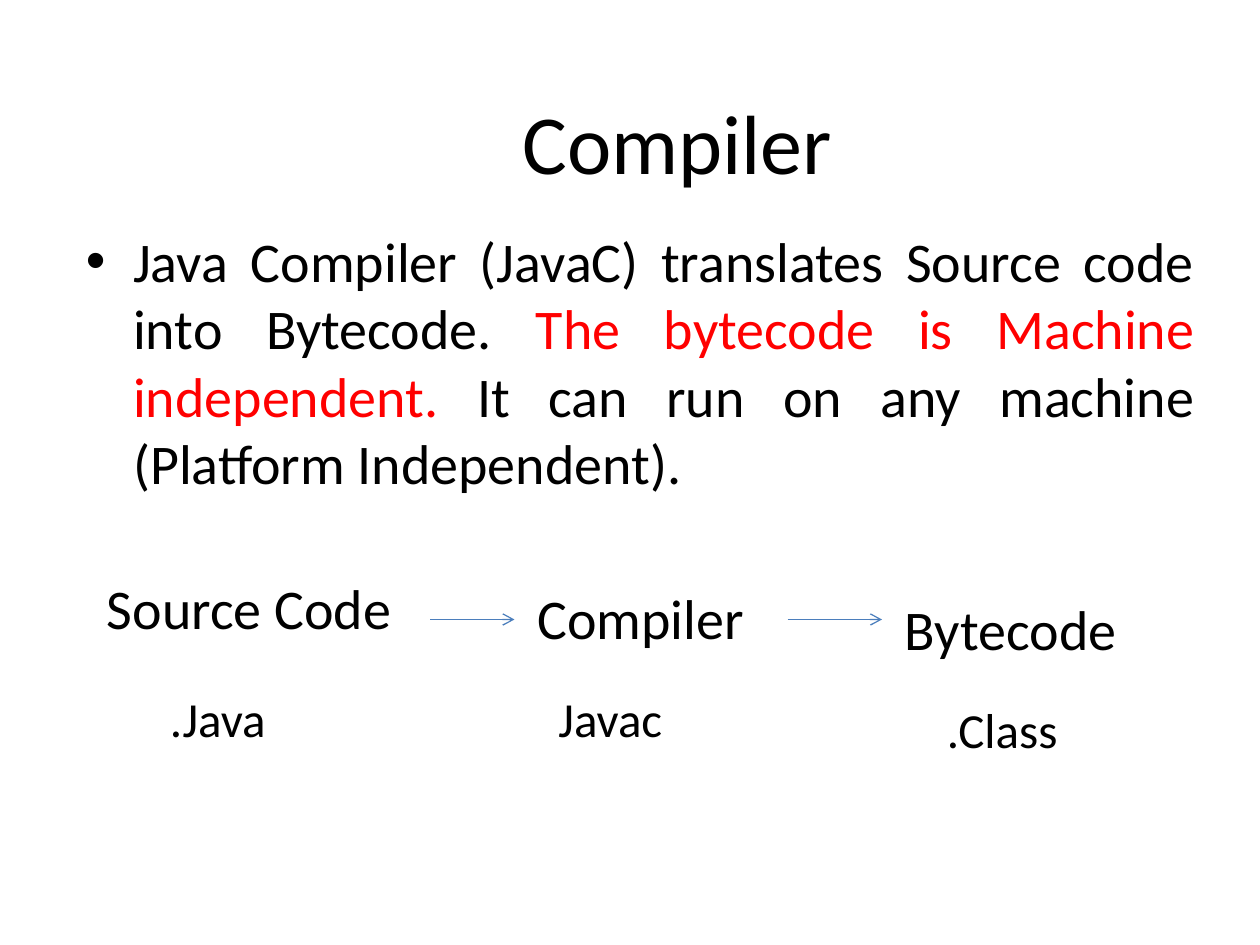
from lxml.etree import SubElement
from pptx import Presentation
from pptx.dml.color import RGBColor
from pptx.enum.shapes import MSO_CONNECTOR as Connector
from pptx.enum.text import MSO_AUTO_SIZE as AutoSize, PP_ALIGN as Align
from pptx.oxml.ns import qn
from pptx.util import Emu, Pt

EMU_PER_PX = 7620
BLACK, RED, BLUE = "000000", "FF0000", "4B7EBC"


def px(length):
    """Turn whole pixels (120 to the inch) into EMU."""
    return Emu(length * EMU_PER_PX)


def color(value):
    """Turn a hex string into a colour."""
    return RGBColor.from_string(value)


def set_format(target, values):
    """Set every attribute named in a dict of values."""
    for name, value in values.items():
        setattr(target, name, value)


def add_text(slide, box, runs, size, align=Align.LEFT, auto_size=AutoSize.SHAPE_TO_FIT_TEXT):
    """Add a one-paragraph text box from (text, colour) runs."""
    shape = slide.shapes.add_textbox(*map(px, box))
    set_format(shape.text_frame, {"word_wrap": True, "auto_size": auto_size})
    paragraph = shape.text_frame.paragraphs[0]
    paragraph.alignment = align
    for text, fill in runs:
        run = paragraph.add_run()
        run.text = text
        set_format(run.font, {"name": "Calibri", "size": Pt(size)})
        run.font.color.rgb = color(fill)
    return paragraph


def add_bullet(paragraph, indent):
    """Give a paragraph a round bullet with a hanging indent."""
    paragraph.space_before = Pt(6.4)
    properties = paragraph._p.get_or_add_pPr()
    properties.set("marL", str(px(indent)))
    properties.set("indent", str(-px(indent)))
    SubElement(properties, qn("a:buFont"), typeface="Arial")
    SubElement(properties, qn("a:buChar"), char="•")


def add_arrow(slide, start, end, y):
    """Add a thin horizontal arrow without a shadow."""
    arrow = slide.shapes.add_connector(Connector.STRAIGHT, px(start), px(y), px(end), px(y))
    arrow.line.width = Pt(0.75)
    arrow.line.color.rgb = color(BLUE)
    SubElement(arrow.line._get_or_add_ln(), qn("a:tailEnd"), type="arrow")
    SubElement(arrow._element.spPr, qn("a:effectLst"))


def main():
    """Build the compiler slide and save it."""
    presentation = Presentation()
    set_format(presentation, {"slide_width": px(1200), "slide_height": px(900)})
    slide = presentation.slides.add_slide(presentation.slide_layouts[6])

    add_text(slide, (360, 80, 570, 109), [("Compiler", BLACK)], 48, Align.CENTER)
    description = [
        ("Java Compiler (JavaC) translates Source code into Bytecode. ", BLACK),
        ("The bytecode is Machine independent.", RED),
        (" It can run on any machine (Platform Independent).", BLACK),
    ]
    body = add_text(slide, (70, 210, 1080, 594), description, 32, Align.JUSTIFY, AutoSize.NONE)
    add_bullet(body, 45)

    labels = [
        ("Source Code", (90, 540, 310, 77), 32),
        ("Compiler", (500, 550, 240, 77), 32),
        ("Bytecode", (850, 560, 280, 77), 32),
        (".Java", (150, 650, 220, 68), 28),
        ("Javac", (520, 650, 160, 68), 28),
        (".Class", (890, 660, 160, 68), 28),
    ]
    for text, box, size in labels:
        add_text(slide, box, [(text, BLACK)], size)
    for start, end in [(410, 490), (750, 840)]:
        add_arrow(slide, start, end, 590)

    presentation.save("out.pptx")


if __name__ == "__main__":
    main()
